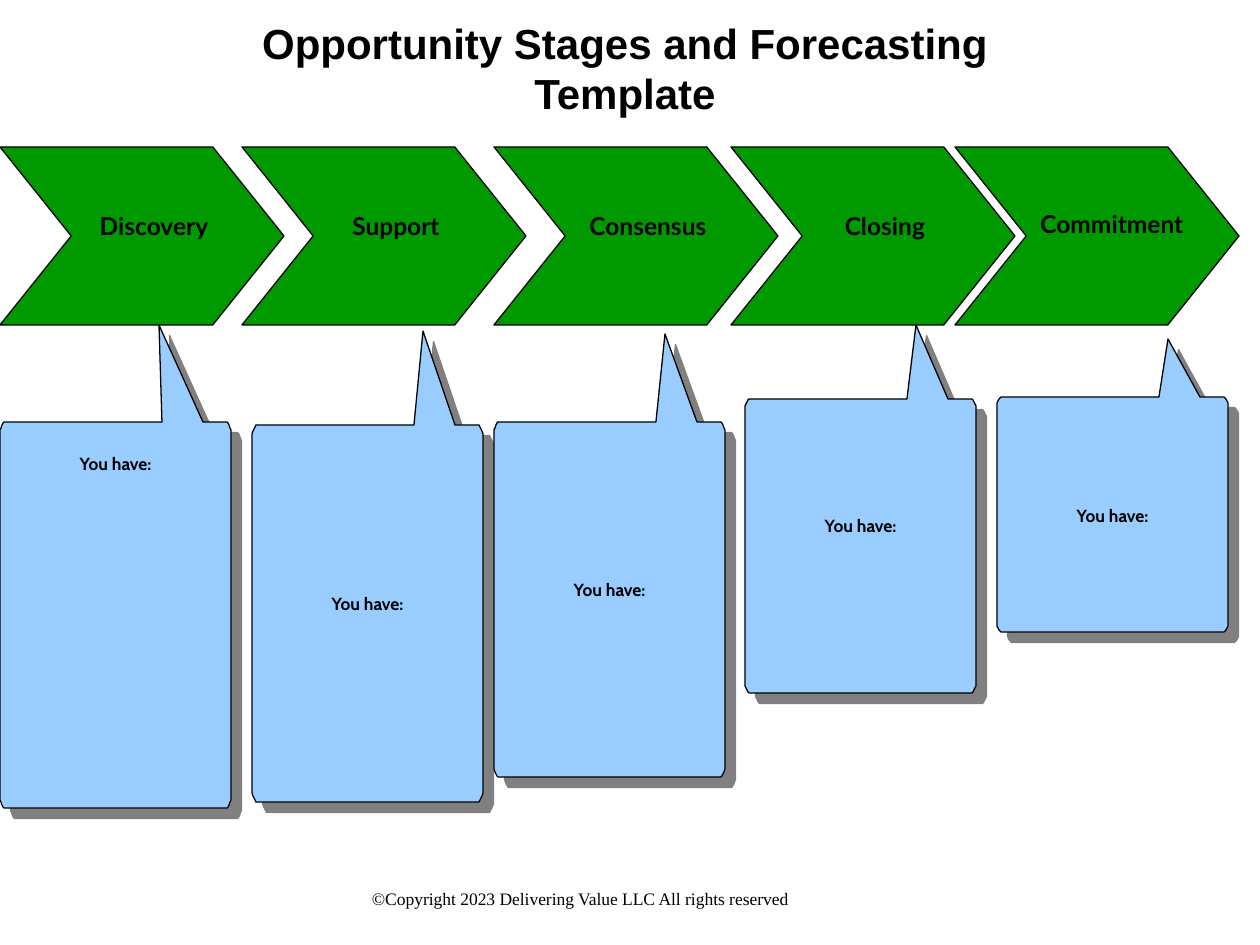
from math import cos, radians, sin

from lxml.etree import SubElement
from pptx import Presentation
from pptx.dml.color import RGBColor
from pptx.enum.shapes import MSO_SHAPE as Shape
from pptx.enum.text import MSO_ANCHOR as Anchor, PP_ALIGN as Align
from pptx.oxml.ns import qn
from pptx.util import Emu, Pt

SCALE = 914400 / 126
COLORS = {"black": "000000", "green": "009900", "blue": "99CCFF", "shadow": "808080"}


def px(*lengths):
    return [Emu(round(length * SCALE)) for length in lengths]


def write(shape, text, font, size, align, anchor, margins, bold=True, wrap=True):
    box = shape.text_frame
    box.word_wrap = wrap
    box.vertical_anchor = anchor
    box.margin_left, box.margin_top, box.margin_right, box.margin_bottom = px(*margins)
    para = box.paragraphs[0]
    para.alignment = align
    span = para.add_run()
    span.text = text
    span.font.name = font
    span.font.size = Pt(size)
    span.font.bold = bold
    span.font.color.rgb = RGBColor.from_string(COLORS["black"])


deck = Presentation()
deck.slide_width, deck.slide_height = px(1260, 945)
page = deck.slides.add_slide(deck.slide_layouts[5])

# Title
title = page.shapes.title
title.left, title.top, title.width, title.height = px(168, 11, 914, 115)
write(title, "Opportunity Stages and Forecasting Template", "Arial", 24,
      Align.CENTER, Anchor.TOP, (13, 6, 13, 6))

# Stage chevrons: name, left, left inset, bottom inset
stages = [
    ("Discovery", 0, 24, 20),
    ("Support", 242, 24, 20),
    ("Consensus", 494, 24, 20),
    ("Closing", 731, 24, 20),
    ("Commitment", 955, 30, 24),
]
painted = []
for name, left, inset, lift in stages:
    chevron = page.shapes.add_shape(Shape.CHEVRON, *px(left, 147, 284, 178))
    chevron.adjustments[0] = 0.4
    chevron.shadow.inherit = False
    write(chevron, name, "Lato", 14, Align.CENTER, Anchor.MIDDLE,
          (inset, 0, 0, lift), wrap=False)
    painted.append((chevron, "green"))

# Callouts: left, tip offset, tip y, body top, body bottom, corner height, text middle
WIDTH, CORNER = 231, 6
callouts = [
    (0, 159, 325, 422, 808, 11, 464),
    (252, 171, 331, 425, 802, 12, 604),
    (494, 171, 334, 422, 777, 11, 590),
    (745, 171, 325, 399, 693, 9, 526),
    (997, 171, 339, 397, 632, 8, 516),
]
for left, tip, tip_y, top, bottom, corner, middle in callouts:
    right = left + WIDTH
    outline = [(left + 162, top), (left + tip, tip_y), (left + 203, top)]
    corners = [
        (right - CORNER, top + corner, 270),
        (right - CORNER, bottom - corner, 0),
        (left + CORNER, bottom - corner, 90),
        (left + CORNER, top + corner, 180),
    ]
    for x, y, start in corners:
        for step in range(0, 91, 15):
            angle = radians(start + step)
            outline.append((x + CORNER * cos(angle), y + corner * sin(angle)))
    builder = page.shapes.build_freeform(*outline[0], scale=SCALE)
    builder.add_line_segments(outline[1:], close=True)
    callout = builder.convert_to_shape()
    callout.shadow.inherit = False
    write(callout, "You have:", "Cabin", 10, Align.CENTER, Anchor.TOP,
          (13, middle - tip_y - 11, 13, 6))
    painted.append((callout, "blue"))

    # Hard drop shadow
    effects = callout._element.spPr.find(qn("a:effectLst"))
    drop = SubElement(effects, qn("a:outerShdw"), dist=str(Pt(8.5)),
                      dir="2700000", algn="ctr", rotWithShape="0")
    SubElement(drop, qn("a:srgbClr"), val=COLORS["shadow"])

# Fills and outlines
for shape, color in painted:
    shape.fill.solid()
    shape.fill.fore_color.rgb = RGBColor.from_string(COLORS[color])
    shape.line.color.rgb = RGBColor.from_string(COLORS["black"])
    shape.line.width = Pt(0.75)

# Copyright line
footer = page.shapes.add_textbox(*px(346, 882, 460, 34))
write(footer, "©Copyright 2023 Delivering Value LLC All rights reserved",
      "Times New Roman", 10, Align.LEFT, Anchor.TOP, (26, 6, 0, 6), bold=False)

deck.save("out.pptx")
